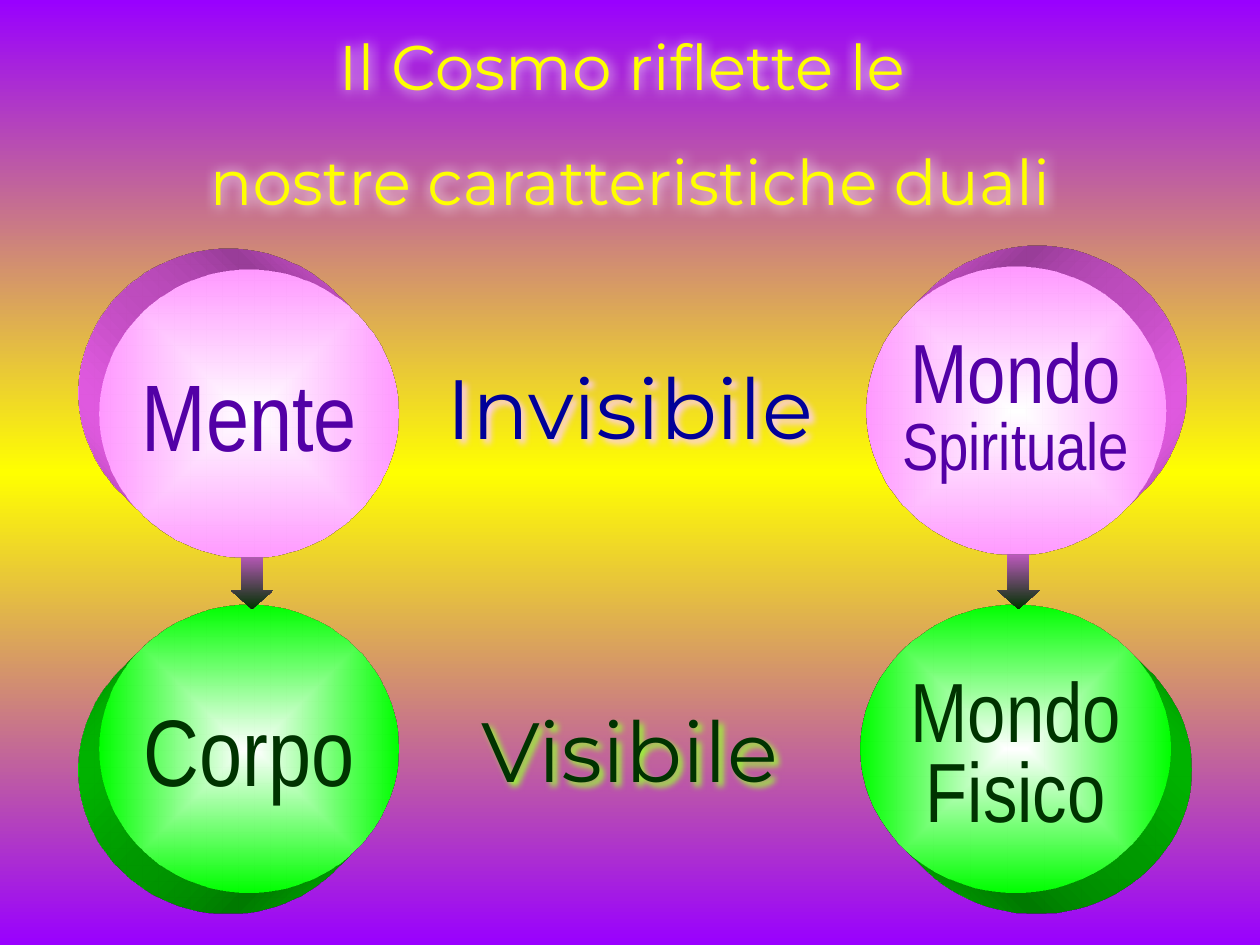
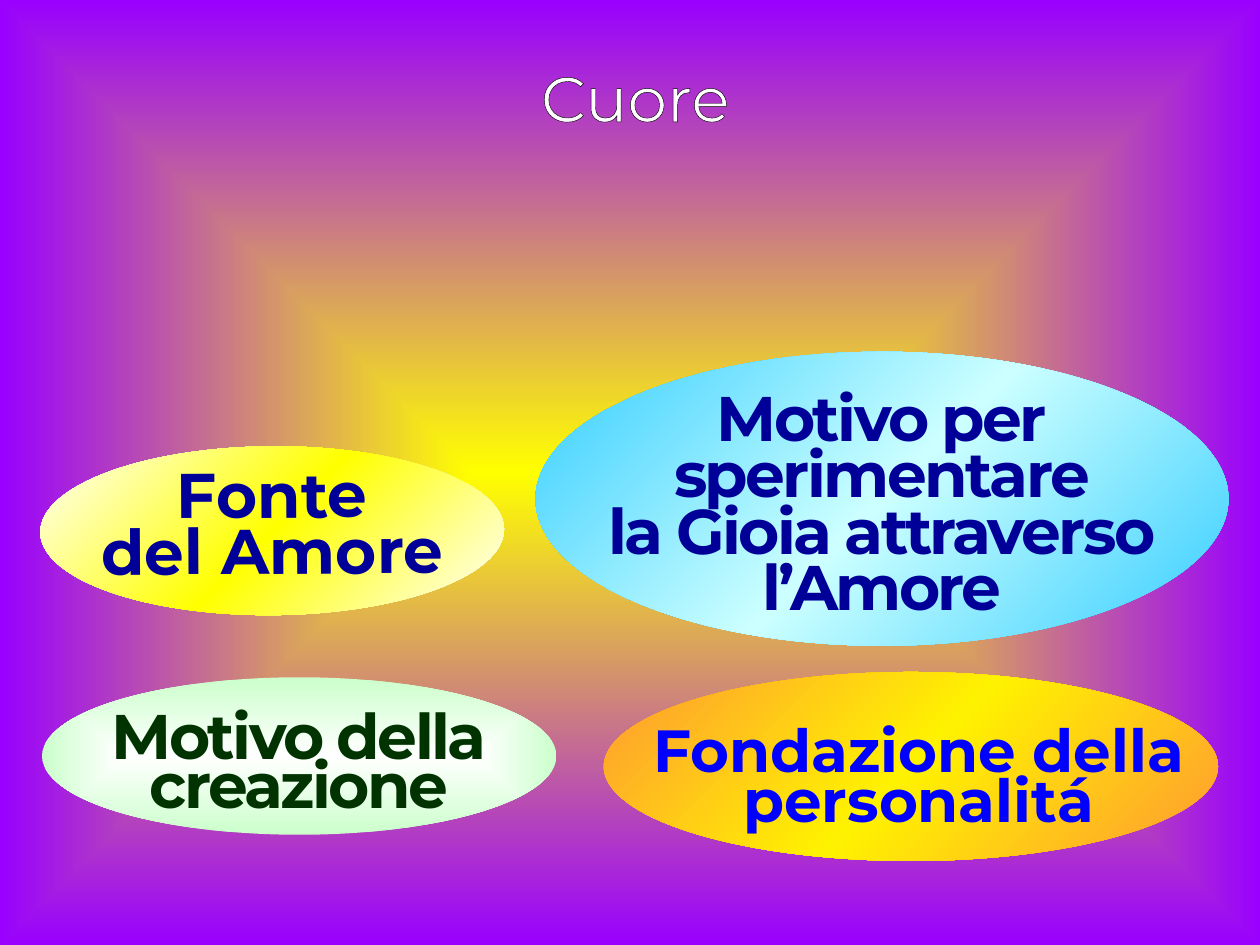
from pptx import Presentation
from pptx.dml.color import RGBColor as Rgb
from pptx.enum.shapes import MSO_SHAPE as Kind
from pptx.enum.text import MSO_ANCHOR as Anchor, MSO_AUTO_SIZE as Fit, PP_ALIGN as Align
from pptx.oxml import parse_xml
from pptx.oxml.ns import nsdecls, qn
from pptx.util import Pt

HUES = {
    "violet": "9900FF", "yellow": "FFFF00", "white": "FFFFFF", "black": "000000",
    "navy": "000099", "blue": "0000FF", "purple": "5300A6", "forest": "003300",
    "pink": "FF99FF", "rose": "FF66FF", "lime": "00FF00", "leaf": "00CC00",
    "mint": "CCFFCC", "orange": "FF9933", "gold": "FFF200", "sky": "33CCFF",
    "ice": "CCFFFF", "lilac": "CCCCFF", "glow": "FFCCFF", "moss": "99FF33",
}
SANS, NARROW = "Montserrat", "Arial Narrow"


def node(tag, body, attrs=""):
    return parse_xml(f"<a:{tag} {nsdecls('a')} {attrs}>{body}</a:{tag}>")


def tint(name):
    return f'<a:srgbClr val="{HUES[name]}"/>'


def blend(fill, root, names, angle=None):
    """Fill with evenly spaced colours, along an angle or out from the centre."""
    fill.solid()
    fill.fore_color.rgb = Rgb.from_string(HUES[names[0]])
    step = 100000 // (len(names) - 1)
    stops = "".join(f'<a:gs pos="{i * step}">{tint(n)}</a:gs>' for i, n in enumerate(names))
    if angle is None:
        mode = '<a:path path="shape"><a:fillToRect l="50000" t="50000" r="50000" b="50000"/></a:path>'
    else:
        mode = f'<a:lin ang="{angle * 60000}" scaled="1"/>'
    flat = root.find(".//" + qn("a:solidFill"))
    flat.getparent().replace(flat, node("gradFill", f"<a:gsLst>{stops}</a:gsLst>{mode}", 'rotWithShape="1"'))


def edge(run, name, width):
    run._r.get_or_add_rPr().insert(0, node("ln", f"<a:solidFill>{tint(name)}</a:solidFill>", f'w="{Pt(width)}"'))


def halo(shape, name, blur, dist=0):
    cast = f'<a:outerShdw blurRad="{Pt(blur)}" dist="{Pt(dist)}" dir="2700000" algn="ctr" rotWithShape="0">{tint(name)}</a:outerShdw>'
    shape._element.spPr.append(node("effectLst", cast))


def write(shape, lines, hue, size, font=SANS, bold=False, lead=None, track=0, drop=0, wrap=False):
    """Set centred lines; a line may be (text, size), and drop pushes the text down."""
    frame = shape.text_frame
    frame.word_wrap = wrap
    frame.auto_size = Fit.NONE
    frame.margin_top = Pt(3.6 + drop)
    for i, line in enumerate(lines):
        text, high = line if isinstance(line, tuple) else (line, size)
        para = frame.add_paragraph() if i else frame.paragraphs[0]
        para.alignment = Align.CENTER
        para.line_spacing = lead
        run = para.add_run()
        run.text = text
        run.font.name, run.font.size, run.font.bold = font, Pt(high), bold
        run.font.color.rgb = Rgb.from_string(HUES[hue])
        if track:
            run._r.get_or_add_rPr().set("spc", str(int(track * 100)))
    return run


def place(shape, box):
    shape.left, shape.top, shape.width, shape.height = map(Pt, box)
    return shape


def form(slide, kind, box, names=None, angle=None):
    shape = slide.shapes.add_shape(kind, *map(Pt, box))
    shape.shadow.inherit = False
    shape.line.fill.background()
    if names:
        blend(shape.fill, shape._element.spPr, names, angle)
    else:
        shape.fill.background()
    return shape


def oval(slide, box, names, angle, lines, hue, size, **style):
    shape = form(slide, Kind.OVAL, box, names, angle)
    if lines:
        shape.text_frame.vertical_anchor = Anchor.MIDDLE
        write(shape, lines, hue, size, **style)
    return shape


def disc(slide, box, corner, rim, names, lines, hue, size, **style):
    """Oval with a solid rim receding towards the named corner."""
    shape = oval(slide, box, names, None, lines, hue, size, font=NARROW, **style)
    rig = f'<a:camera prst="legacyOblique{corner}"/><a:lightRig rig="legacyFlat3" dir="b"/>'
    skin = f"<a:extrusionClr>{tint(rim)}</a:extrusionClr>"
    shape._element.spPr.append(node("scene3d", rig))
    shape._element.spPr.append(node("sp3d", skin, 'extrusionH="430200" prstMaterial="legacyMatte"'))


def label(slide, box, text, hue, glow, wrap):
    shape = slide.shapes.add_textbox(*map(Pt, box))
    write(shape, [text], hue, 48, wrap=wrap)
    halo(shape, glow, 4, 3)


def start(deck, names, angle, box):
    slide = deck.slides.add_slide(deck.slide_layouts[5])
    blend(slide.background.fill, slide._element, names, angle)
    title = place(slide.shapes.title, box)
    title.text_frame.vertical_anchor = Anchor.TOP
    return slide, title


def cosmos(deck):
    slide, title = start(deck, ["violet", "yellow", "violet"], 90, (126, 12, 468, 72))
    second = slide.shapes.add_textbox(*map(Pt, (24, 78, 672, 48)))
    for shape, text in ((title, "Il Cosmo riflette le "), (second, "nostre caratteristiche duali")):
        edge(write(shape, [text], "yellow", 36), "navy", 2.25)
        halo(shape, "white", 8)

    green, pink = ["white", "lime"], ["white", "pink"]
    disc(slide, (492, 345.5, 177, 164.5), "BottomRight", "leaf", green,
         ["Mondo", "Fisico"], "forest", 48, lead=0.8, drop=11)
    disc(slide, (57, 345.5, 171, 164.5), "BottomLeft", "leaf", green, ["Corpo"], "forest", 54)
    for left in (132, 570):
        arrow = form(slide, Kind.DOWN_ARROW, (left, 306, 24, 42), ["rose", "forest"], 90)
        arrow.adjustments[1] = 0.44
    label(slide, (234, 199.5, 252, 65), "Invisibile", "navy", "glow", True)
    label(slide, (255.5, 395.5, 209, 65), "Visibile", "forest", "moss", False)
    disc(slide, (57, 154, 171, 164.5), "TopLeft", "rose", pink, ["Mente"], "purple", 54)
    disc(slide, (495, 152.5, 171, 164.5), "TopRight", "rose", pink,
         ["Mondo", ("Spirituale", 38)], "purple", 48, lead=0.8)


def heart(deck):
    slide, title = start(deck, ["yellow", "violet"], None, (42, 30, 642, 132))
    run = write(title, ["Cuore"], "white", 36)
    blend(run.font.fill, run._r, ["lilac", "white", "lilac"], 45)
    edge(run, "black", 0.25)

    oval(slide, (24, 387, 294, 90), ["white", "mint"], None, ["Motivo della", "creazione"],
         "forest", 36, bold=True, lead=Pt(28), track=-1.5, drop=18)
    source = oval(slide, (23, 255, 265, 96.5), ["white", "yellow", "white"], 45,
                  ["Fonte", "del Amore"], "navy", 36, bold=True, lead=Pt(32))
    source.rotation = -0.4
    oval(slide, (345, 384, 351, 108), ["orange", "gold", "orange"], 45, [], None, 0)
    oval(slide, (342, 402, 366, 90), None, None, ["Fondazione della", "personalitá"],
         "blue", 34, bold=True, lead=0.7)
    oval(slide, (306, 201, 396, 168), ["sky", "ice", "sky"], 45,
         ["Motivo per", "sperimentare", "la Gioia attraverso", "l’Amore"],
         "navy", 36, bold=True, lead=Pt(32), track=-1.5, drop=13.5)


def main():
    deck = Presentation()
    deck.slide_width, deck.slide_height = Pt(720), Pt(540)
    cosmos(deck)
    heart(deck)
    deck.save("out.pptx")


if __name__ == "__main__":
    main()
